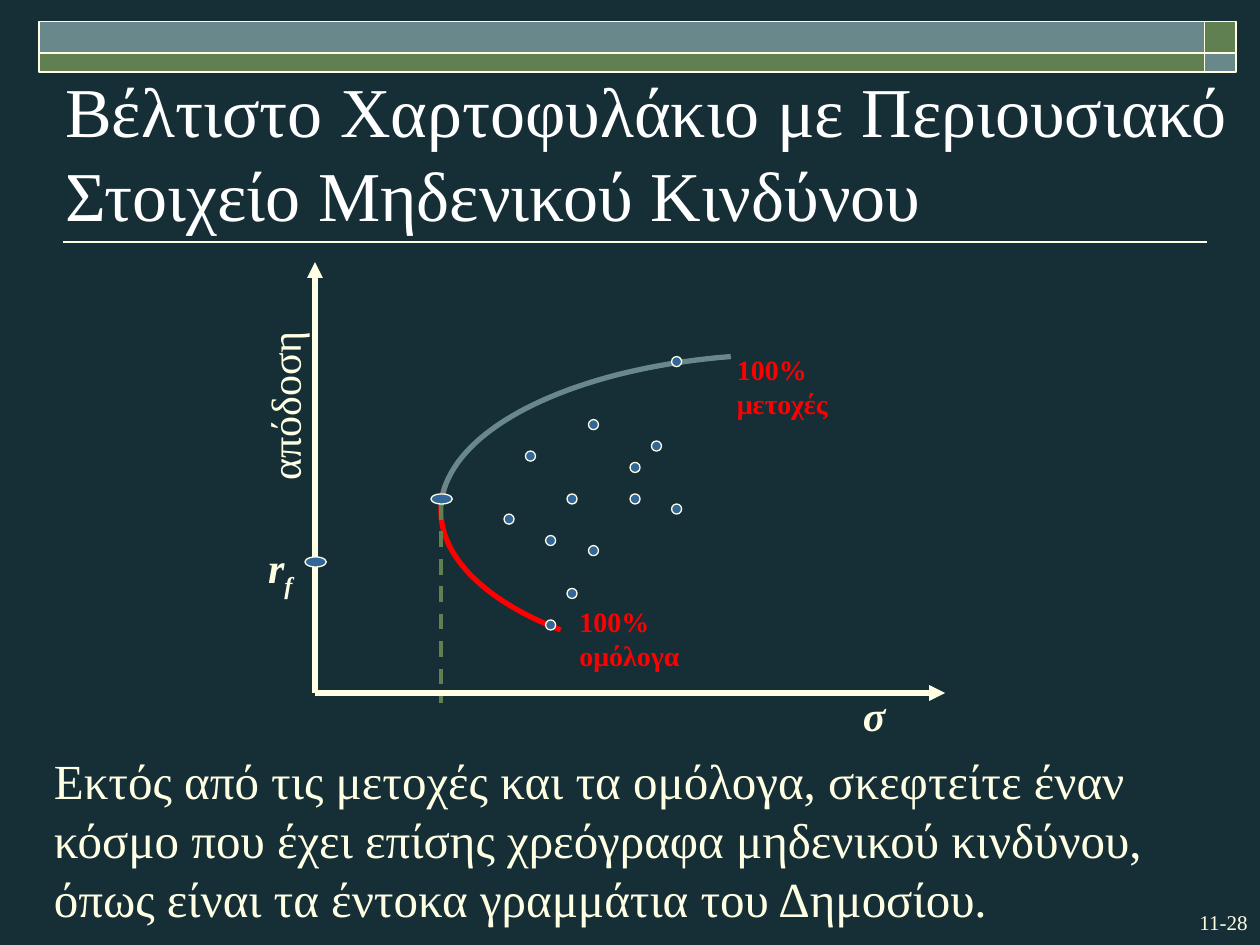
from lxml import etree
from pptx import Presentation
from pptx import util as u
from pptx.dml.color import RGBColor
from pptx.enum import dml, shapes, text
from pptx.oxml.ns import qn

HUES = {"back": "162E36", "cream": "FFFFE3", "white": "FFFFFF", "green": "618052",
        "teal": "69888B", "red": "FF0000", "blue": "336699"}
FONT = "Times New Roman"


def rgb(hue):
    return RGBColor.from_string(HUES[hue])


def label(box, runs, size, hue, bold=False, align="LEFT", anchor="TOP"):
    item = slide.shapes.add_textbox(*map(u.Inches, box))
    frame = item.text_frame
    frame.word_wrap = True
    frame.vertical_anchor = getattr(text.MSO_ANCHOR, anchor)
    para = frame.paragraphs[0]
    para.alignment = getattr(text.PP_ALIGN, align)
    for words, slant, base in runs:
        run = para.add_run()
        run.text = words
        font = run.font
        font.name, font.size, font.bold, font.italic = FONT, u.Pt(size), bold, slant
        font.color.rgb = rgb(hue)
        if base:
            run._r.get_or_add_rPr().set("baseline", str(base * 1000))
    return item


deck = Presentation()
deck.slide_width, deck.slide_height = u.Inches(10), u.Inches(7.5)
slide = deck.slides.add_slide(deck.slide_layouts[6])
slide.background.fill.solid()
slide.background.fill.fore_color.rgb = rgb("back")

bars = [("rect", 9.56, 0.17, 0.25, 0.25, "green"), ("rect", 0.31, 0.17, 9.25, 0.25, "teal"),
        ("rect", 0.31, 0.42, 9.25, 0.15, "green"), ("rect", 9.56, 0.42, 0.25, 0.15, "teal")]
dots = [(4.33, 4.92), (5.33, 2.83), (4.5, 4.67), (4.67, 4.33), (4.33, 4.25), (4.5, 3.92),
        (4, 4.08), (4.17, 3.58), (4.67, 3.33), (5.17, 3.5), (5, 3.67), (5, 3.92), (5.33, 4)]
marks = [(2.42, 4.42), (3.42, 3.92)]

label((9.17, 7.17, 0.83, 0.3), [("11-28", False, 0)], 12, "cream", align="RIGHT")
label((0.42, 0.67, 9.58, 1.25),
      [("Βέλτιστο Χαρτοφυλάκιο με Περιουσιακό Στοιχείο Μηδενικού Κινδύνου", False, 0)],
      40, "white", anchor="BOTTOM")
label((0.33, 5.91, 9.55, 1.26),
      [("Εκτός από τις μετοχές και τα ομόλογα, σκεφτείτε έναν κόσμο που έχει επίσης "
        "χρεόγραφα μηδενικού κινδύνου, όπως είναι τα έντοκα γραμμάτια του Δημοσίου.", False, 0)],
      28, "cream")
label((4.5, 4.75, 1.21, 0.64), [("100% ομόλογα", False, 0)], 16, "red", bold=True)
label((5.75, 2.75, 1.21, 0.64), [("100% μετοχές", False, 0)], 16, "red", bold=True)
label((1.5, 4.25, 0.92, 0.5), [("r", True, 0), ("f", True, -25)], 24, "cream", bold=True, align="RIGHT")
label((6.75, 5.42, 0.5, 0.5), [("σ", True, 0)], 24, "cream", bold=True)
side = label((1.38, 2.79, 1.75, 0.5), [("απόδοση", False, 0)], 24, "cream")
side.rotation = 270

curves = [("red", (3.54, 3.84), (3.51, 3.91), (3.5, 3.99), (3.5, 4.06)),
          ("teal", (5.8, 2.83), (4.51, 2.93), (3.55, 3.42), (3.5, 4.01)),
          ("red", (3.5, 4.06), (3.5, 4.42), (3.85, 4.77), (4.45, 5))]
steps = 40
for hue, *ctrl in curves:
    spots = []
    for step in range(steps + 1):
        t = step / steps
        parts = ((1 - t) ** 3, 3 * t * (1 - t) ** 2, 3 * t ** 2 * (1 - t), t ** 3)
        spots.append([u.Inches(sum(w * p[axis] for w, p in zip(parts, ctrl))) for axis in (0, 1)])
    pen = slide.shapes.build_freeform(*spots[0])
    pen.add_line_segments(spots[1:], close=False)
    curve = pen.convert_to_shape()
    curve.shadow.inherit = False
    curve.fill.background()
    curve.line.color.rgb = rgb(hue)
    curve.line.width = u.Pt(3)

lines = [(9.58, 1.92, 0.5, 1.92, "cream", 1, ""), (2.5, 5.5, 7.5, 5.5, "cream", 3, "arrow"),
         (2.5, 5.5, 2.5, 2.08, "cream", 3, "arrow"), (3.5, 4, 3.5, 5.58, "green", 2.25, "dash")]
for *ends, hue, width, style in lines:
    line = slide.shapes.add_connector(shapes.MSO_CONNECTOR.STRAIGHT, *map(u.Inches, ends))
    line.line.color.rgb = rgb(hue)
    line.line.width = u.Pt(width)
    if style == "dash":
        line.line.dash_style = dml.MSO_LINE.DASH
    if style == "arrow":
        etree.SubElement(line.line._get_or_add_ln(), qn("a:tailEnd"), type="triangle")
    etree.SubElement(line._element.spPr, qn("a:effectLst"))

solids = bars + [("dot", x, y, 0.08, 0.08, "blue") for x, y in dots]
solids += [("dot", x, y, 0.17, 0.08, "blue") for x, y in marks]
kinds = {"rect": (shapes.MSO_SHAPE.RECTANGLE, 1), "dot": (shapes.MSO_SHAPE.OVAL, 0.75)}
for kind, *box, hue in solids:
    form, width = kinds[kind]
    solid = slide.shapes.add_shape(form, *map(u.Inches, box))
    solid.shadow.inherit = False
    solid.fill.solid()
    solid.fill.fore_color.rgb = rgb(hue)
    solid.line.color.rgb = rgb("cream")
    solid.line.width = u.Pt(width)

deck.save("out.pptx")
